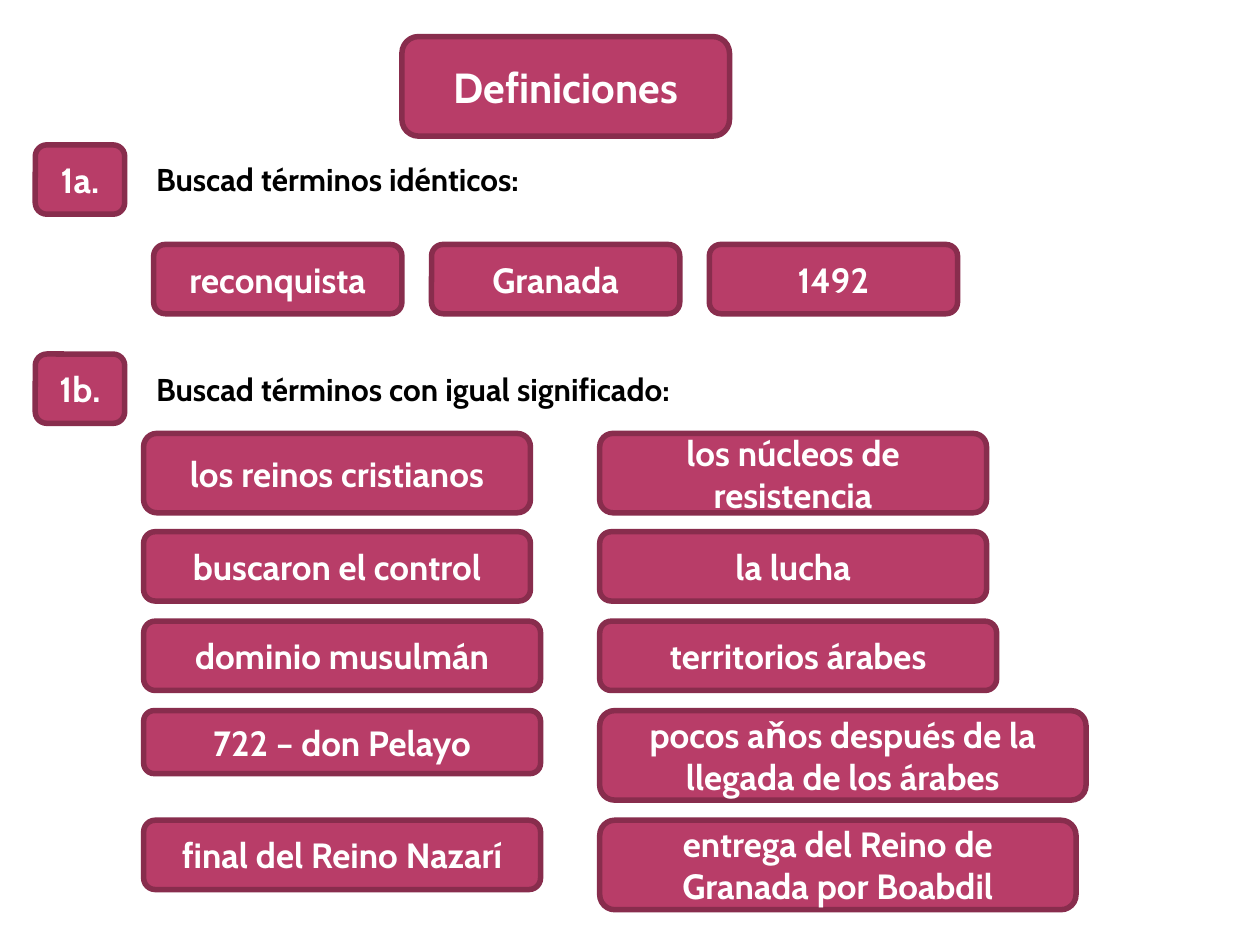
from dataclasses import dataclass

from pptx import Presentation
from pptx.dml.color import RGBColor
from pptx.enum.shapes import MSO_SHAPE
from pptx.enum.text import MSO_ANCHOR, MSO_AUTO_SIZE, PP_ALIGN
from pptx.util import Inches, Pt

# Content
TITLE = "Definiciones"
# number, instruction, top of the number box
TASKS = [
    ("1a.", "Buscad términos idénticos:", 1.15),
    ("1b.", "Buscad términos con igual significado:", 2.81),
]
IDENTICAL_TERMS = ["reconquista", "Granada", "1492"]
# top, then (term, width, height) for the left and right columns
EQUIVALENT_TERMS = [
    (3.44, ("los reinos cristianos", 3.07, 0.63),
     ("los núcleos de resistencia", 3.07, 0.63)),
    (4.22, ("buscaron el control", 3.07, 0.55), ("la lucha", 3.07, 0.55)),
    (4.93, ("dominio musulmán", 3.15, 0.55), ("territorios árabes", 3.15, 0.55)),
    (5.64, ("722 – don Pelayo", 3.15, 0.5),
     ("pocos aňos después de la llegada de los árabes", 3.86, 0.71)),
    (6.51, ("final del Reino Nazarí", 3.15, 0.55),
     ("entrega del Reino de Granada por Boabdil", 3.78, 0.71)),
]

# Grid, in inches
NUMBER_LEFT, NUMBER_WIDTH = 0.28, 0.71
ROW_HEIGHT = 0.55
TERM_LEFT, TERM_TOP, TERM_WIDTH, TERM_STEP = 1.22, 1.94, 1.97, 2.205
COLUMN_LEFTS = (1.14, 4.76)
INSTRUCTION_WIDTH, INSTRUCTION_HEIGHT = 4.7, 0.4


@dataclass(frozen=True)
class Theme:
    font: str = "Cabin"
    fill: RGBColor = RGBColor(0xB8, 0x3D, 0x68)
    border: RGBColor = RGBColor(0x88, 0x2D, 0x4D)
    light: RGBColor = RGBColor(0xFF, 0xFF, 0xFF)
    dark: RGBColor = RGBColor(0x00, 0x00, 0x00)
    title_size: int = 24
    term_size: int = 20
    instruction_size: int = 18
    border_width: float = 3.15


THEME = Theme()


def write_text(shape, text, *, size, color, align, anchor, wrap=True):
    frame = shape.text_frame
    frame.word_wrap = wrap
    frame.vertical_anchor = anchor
    paragraph = frame.paragraphs[0]
    paragraph.alignment = align
    run = paragraph.add_run()
    run.text = text
    run.font.name = THEME.font
    run.font.size = Pt(size)
    run.font.bold = True
    run.font.color.rgb = color


def add_box(slide, text, left, top, width, height=ROW_HEIGHT, size=THEME.term_size):
    shape = slide.shapes.add_shape(
        MSO_SHAPE.ROUNDED_RECTANGLE, *map(Inches, (left, top, width, height)))
    shape.shadow.inherit = False
    shape.fill.solid()
    shape.fill.fore_color.rgb = THEME.fill
    shape.line.color.rgb = THEME.border
    shape.line.width = Pt(THEME.border_width)
    write_text(shape, text, size=size, color=THEME.light,
               align=PP_ALIGN.CENTER, anchor=MSO_ANCHOR.MIDDLE)


def add_instruction(slide, text, left, top):
    shape = slide.shapes.add_textbox(
        *map(Inches, (left, top, INSTRUCTION_WIDTH, INSTRUCTION_HEIGHT)))
    write_text(shape, text, size=THEME.instruction_size, color=THEME.dark,
               align=PP_ALIGN.LEFT, anchor=MSO_ANCHOR.TOP)
    shape.text_frame.auto_size = MSO_AUTO_SIZE.SHAPE_TO_FIT_TEXT


def main():
    presentation = Presentation()
    presentation.slide_width, presentation.slide_height = Inches(10), Inches(7.5)
    slide = presentation.slides.add_slide(presentation.slide_layouts[6])

    # Title
    add_box(slide, TITLE, 3.19, 0.29, 2.6, 0.79, size=THEME.title_size)

    # Numbered instructions
    for number, instruction, top in TASKS:
        add_box(slide, number, NUMBER_LEFT, top, NUMBER_WIDTH)
        middle_offset = (ROW_HEIGHT - INSTRUCTION_HEIGHT) / 2
        add_instruction(slide, instruction, COLUMN_LEFTS[0], top + middle_offset)

    # Row of identical terms
    for column, term in enumerate(IDENTICAL_TERMS):
        add_box(slide, term, TERM_LEFT + column * TERM_STEP, TERM_TOP, TERM_WIDTH)

    # Two columns of equivalent terms
    for top, *pair in EQUIVALENT_TERMS:
        for left, (term, width, height) in zip(COLUMN_LEFTS, pair):
            add_box(slide, term, left, top, width, height)

    presentation.save("out.pptx")


if __name__ == "__main__":
    main()
